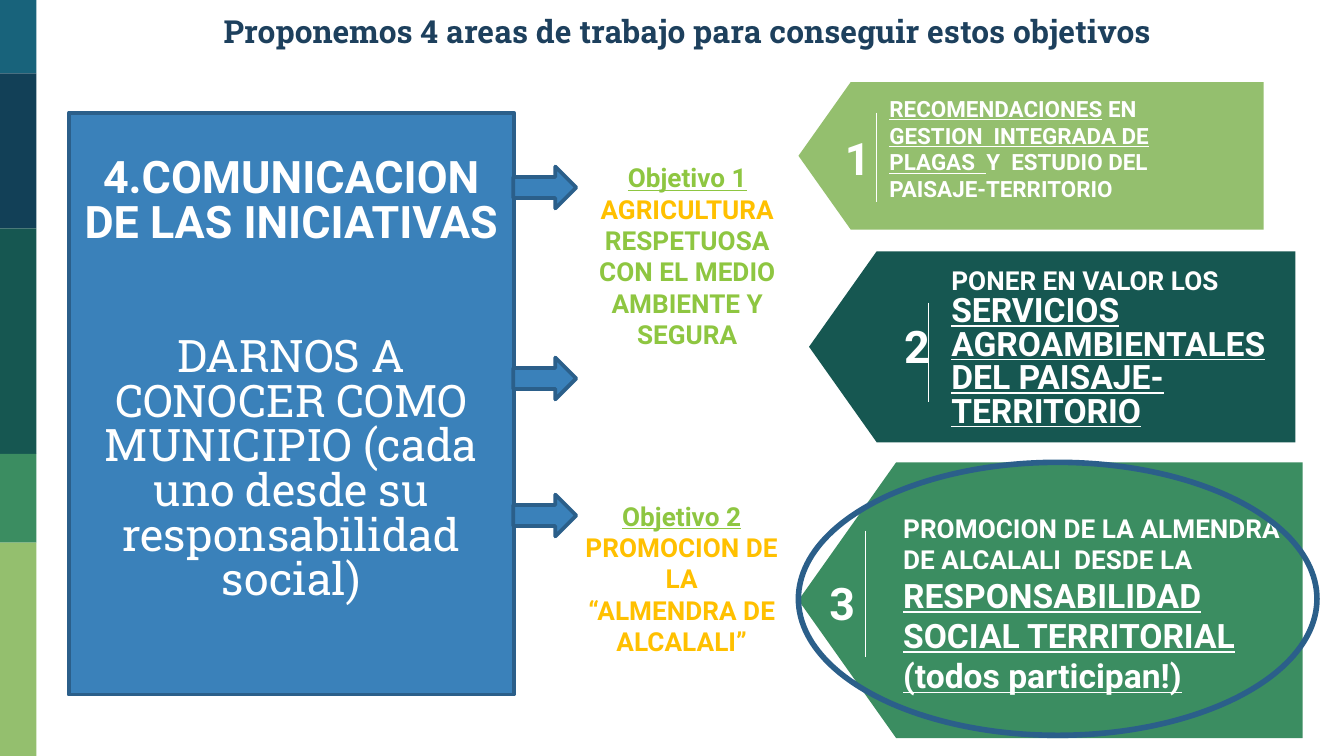
import pptx
import pptx.util
import pptx.dml.color
import pptx.enum.shapes
import pptx.enum.text
import pptx.oxml.ns
import lxml.etree

Cm = pptx.util.Cm
Pt = pptx.util.Pt
SHAPE = pptx.enum.shapes.MSO_SHAPE
CENTER = pptx.enum.text.PP_ALIGN.CENTER
LEFT = pptx.enum.text.PP_ALIGN.LEFT
RGB = pptx.dml.color.RGBColor.from_string

colours = {
    "white": "FFFFFF", "title": "1D405D", "teal": "18637B", "navy": "124057",
    "forest": "165751", "green": "3B8D61", "light": "94BF6E", "blue": "3A81BA",
    "outline": "2B5F8A", "lime": "8EC641", "amber": "FFC000",
}

deck = pptx.Presentation()
deck.slide_width = Cm(25.4)
deck.slide_height = Cm(14.29)
page = deck.slides.add_slide(deck.slide_layouts[6])


def draw(kind, place, fill=None, outline_width=None):
    shape = page.shapes.add_shape(kind, *map(Cm, place))
    shape.shadow.inherit = False
    if fill:
        shape.fill.solid()
        shape.fill.fore_color.rgb = RGB(colours[fill])
    else:
        shape.fill.background()
    if outline_width:
        shape.line.color.rgb = RGB(colours["outline"])
        shape.line.width = Pt(outline_width)
    else:
        shape.line.fill.background()
    return shape


def write(box, paragraphs, align=CENTER, inset=0.13, spacing=None, font="Roboto"):
    frame = box.text_frame
    frame.word_wrap = True
    frame.vertical_anchor = pptx.enum.text.MSO_ANCHOR.MIDDLE
    frame.margin_left = frame.margin_right = Cm(0.25)
    frame.margin_top = frame.margin_bottom = Cm(inset)
    for index, spans in enumerate(paragraphs):
        para = frame.add_paragraph() if index else frame.paragraphs[0]
        para.alignment = align
        para.line_spacing = spacing
        para.font.name = font
        para.font.bold = True
        for text, size, colour, underline in spans:
            span = para.add_run()
            span.text = text
            span.font.size = Pt(size)
            span.font.color.rgb = RGB(colours[colour])
            span.font.underline = underline
    return frame


strip_edges = [0, 1.39, 4.32, 8.58, 10.26, 14.29]
strip_fills = ["teal", "navy", "forest", "green", "light"]
for top, bottom, fill in zip(strip_edges, strip_edges[1:], strip_fills):
    draw(SHAPE.RECTANGLE, (0, top, 0.69, bottom - top), fill)

title = page.shapes.add_textbox(Cm(0.89), Cm(-0.25), Cm(24.21), Cm(1.65))
write(title, [[("Proponemos 4 areas de trabajo para conseguir estos objetivos", 17, "title", False)]],
      inset=0.25, font="Roboto Slab")

panel = draw(SHAPE.RECTANGLE, (1.3, 2.13, 8.41, 11), "blue", 2)
panel_frame = write(panel, [
    [("4.COMUNICACION DE LAS INICIATIVAS", 24, "white", False)],
    [("DARNOS A CONOCER COMO MUNICIPIO (cada uno desde su responsabilidad social)", 24, "white", False)],
], spacing=0.83)
panel_frame.margin_bottom = Cm(0.97)
message = panel_frame.paragraphs[1]
message.space_before = Pt(48)
message.font.name = "Roboto Slab"
message.font.bold = False

objectives = [
    ((10.69, 2.13, 4.6, 5.41), [
        [("Objetivo 1", 14, "lime", True)],
        [("AGRICULTURA", 14, "amber", False),
         (" RESPETUOSA CON EL MEDIO AMBIENTE Y SEGURA", 14, "lime", False)],
    ]),
    ((10.69, 8.74, 4.39, 4.39), [
        [("Objetivo 2", 14, "lime", True)],
        [("PROMOCION DE LA", 14, "amber", False)],
        [("“ALMENDRA DE ALCALALI”", 14, "amber", False)],
    ]),
]
for place, paragraphs in objectives:
    write(draw(SHAPE.RECTANGLE, place, "white"), paragraphs, inset=0.25)

areas = [
    ("light", (15.09, 1.55, 8.79, 2.79), (15.72, 2.01, 0.64, 1.93),
     (16.56, 2.13, 3.81), (16.56, 1.68, 6.91, 2.26), None,
     [("RECOMENDACIONES", 12, "white", True), (" EN ", 12, "white", False),
      ("GESTION  INTEGRADA DE PLAGAS  ", 12, "white", True),
      ("Y  ESTUDIO DEL PAISAJE-TERRITORIO", 12, "white", False)]),
    ("forest", (15.29, 4.75, 9.19, 3.61), (16.84, 5.46, 0.61, 2.16),
     (17.55, 5.72, 7.59), (17.73, 5.23, 6.58, 2.77), 0.83,
     [("PONER EN VALOR LOS ", 14, "white", False),
      ("SERVICIOS AGROAMBIENTALES DEL PAISAJE-TERRITORIO", 18, "white", True)]),
    ("green", (15.09, 8.74, 9.53, 5.21), (15.27, 10.03, 1.3, 2.72),
     (16.36, 10.03, 12.42), (16.82, 10.03, 8.28, 2.77), None,
     [("PROMOCION DE LA ALMENDRA DE ALCALALI  DESDE LA ", 14, "white", False),
      ("RESPONSABILIDAD SOCIAL TERRITORIAL (todos participan!)", 18, "white", True)]),
]
for number, (fill, place, number_place, rule, text_place, spacing, spans) in enumerate(areas, 1):
    plate = draw(SHAPE.PENTAGON, place, fill)
    plate.adjustments[0] = 0.354
    plate.rotation = 180
    number_box = page.shapes.add_textbox(*map(Cm, number_place))
    write(number_box, [[(str(number), 24, "white", False)]])
    x, top, bottom = rule
    divider = page.shapes.add_connector(
        pptx.enum.shapes.MSO_CONNECTOR.STRAIGHT, Cm(x), Cm(top), Cm(x), Cm(bottom))
    divider.line.color.rgb = RGB(colours["white"])
    divider.line.width = Pt(0.75)
    lxml.etree.SubElement(divider._element.spPr, pptx.oxml.ns.qn("a:effectLst"))
    text_box = page.shapes.add_textbox(*map(Cm, text_place))
    write(text_box, [spans], align=LEFT, spacing=spacing)

for top in (3.15, 6.76, 9.35):
    draw(SHAPE.RIGHT_ARROW, (9.7, top, 1.19, 0.79), "blue", 2)

draw(SHAPE.OVAL, (15.09, 8.74, 9.8, 5.16), outline_width=3)

deck.save("out.pptx")
